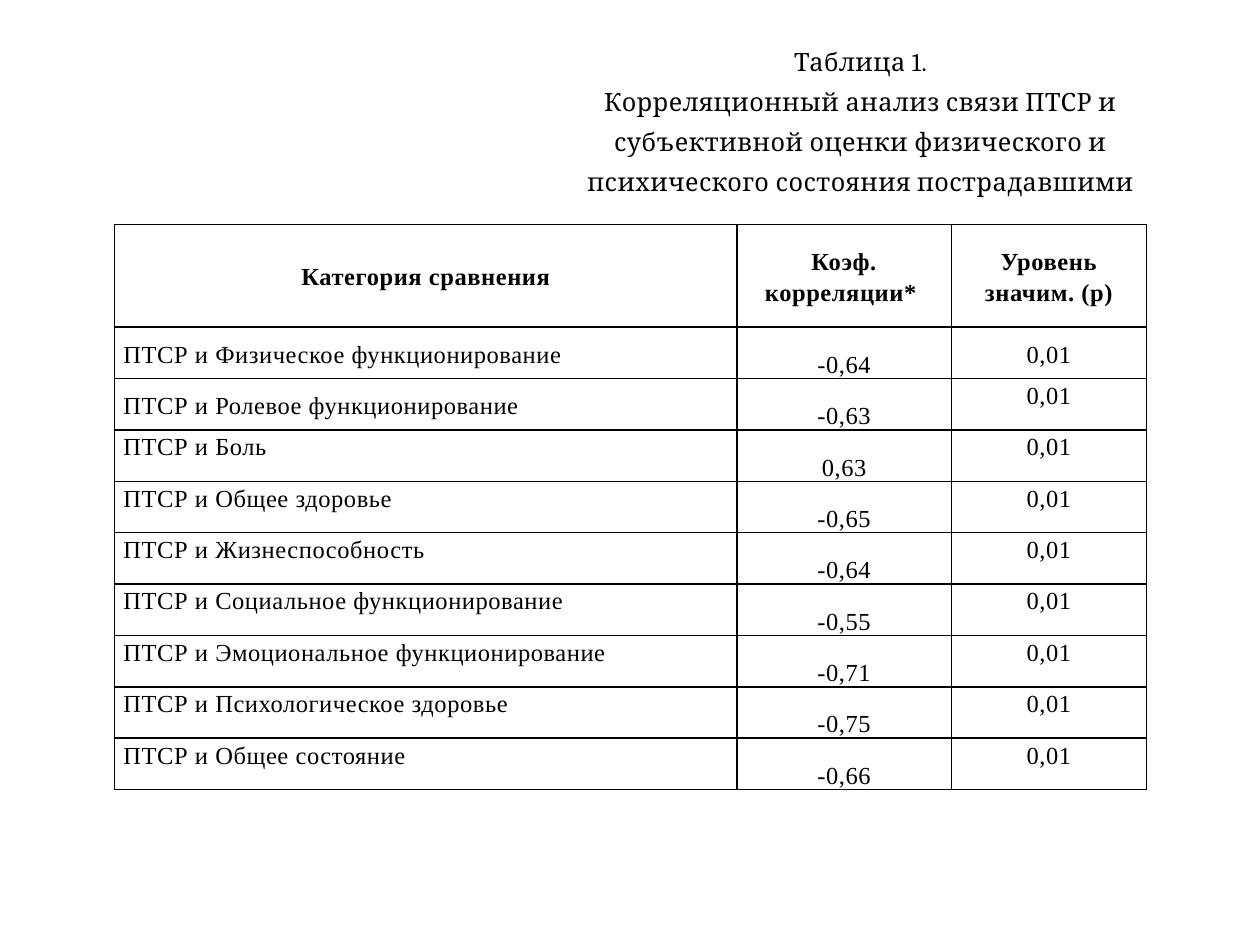
from typing import NamedTuple

from lxml.etree import SubElement
from pptx import Presentation
from pptx.dml.color import RGBColor
from pptx.enum.text import MSO_ANCHOR as Anchor, MSO_AUTO_SIZE as Fit, PP_ALIGN as Align
from pptx.oxml.ns import qn
from pptx.util import Inches, Pt

BLACK = "000000"


class Row(NamedTuple):
    name: str
    coef: str
    name_at: Anchor = Anchor.TOP
    level_at: Anchor = Anchor.TOP


HEADS = ["Категория сравнения", "Коэф. корреляции* ", "Уровень значим. (р)"]
LEVEL = "0,01"
ROWS = [
    Row("Физическое функционирование", "-0,64", Anchor.MIDDLE, Anchor.MIDDLE),
    Row("Ролевое функционирование", "-0,63", Anchor.MIDDLE),
    Row("Боль", "0,63"),
    Row("Общее здоровье", "-0,65"),
    Row("Жизнеспособность", "-0,64"),
    Row("Социальное функционирование", "-0,55"),
    Row("Эмоциональное функционирование", "-0,71"),
    Row("Психологическое здоровье", "-0,75"),
    Row("Общее состояние", "-0,66"),
]
WIDTHS = [4.94, 1.7, 1.55]
HEIGHT = 4.49


def color(code: str) -> RGBColor:
    return RGBColor.from_string(code)


def write(par, text: str, *, font="Times New Roman", size=14.0, bold=False,
          align=Align.CENTER, lines=1.15) -> None:
    par.alignment = align
    par.line_spacing = lines
    run = par.add_run()
    run.text = text
    run.font.name = font
    run.font.size = Pt(size)
    run.font.bold = bold
    run.font.color.rgb = color(BLACK)
    run.font._element.set("spc", "30")


def frame(cell) -> None:
    """Draw a thin line on all four sides of the cell."""
    props = cell._tc.get_or_add_tcPr()
    for side in ("a:lnL", "a:lnR", "a:lnT", "a:lnB"):
        line = SubElement(props, qn(side), w=str(Pt(1)))
        fill = SubElement(line, qn("a:solidFill"))
        SubElement(fill, qn("a:srgbClr"), val=BLACK)


def fill_cell(cell, text: str, anchor: Anchor, **form) -> None:
    frame(cell)
    cell.fill.background()
    cell.margin_left = cell.margin_right = Inches(0.07)
    cell.margin_top = cell.margin_bottom = 0
    cell.vertical_anchor = anchor
    write(cell.text_frame.paragraphs[0], text, **form)


def add_title(slide) -> None:
    title = slide.shapes.title
    title.left, title.top = Inches(0.5), Inches(0.3)
    title.width, title.height = Inches(9), Inches(1.25)
    box = title.text_frame
    box.word_wrap = True
    box.auto_size = Fit.NONE
    box.vertical_anchor = Anchor.MIDDLE
    form = dict(font="Cambria", size=14.4, lines=1.32)
    label = box.paragraphs[0]
    props = label._p.get_or_add_pPr()
    props.set("marL", str(Inches(3.66)))
    props.set("indent", "0")
    write(label, "Таблица 1.", **form)
    write(box.add_paragraph(), "Корреляционный анализ связи ПТСР и субъективной оценки "
          "физического и психического состояния пострадавшими", **form)


def add_grid(slide) -> None:
    table = slide.shapes.add_table(
        len(ROWS) + 1, len(WIDTHS), Inches(0.91), Inches(1.78),
        Inches(sum(WIDTHS)), Inches(HEIGHT)).table
    table.horz_banding = False
    for col, width in zip(table.columns, WIDTHS):
        col.width = Inches(width)
    # The head row is twice as high as the others
    unit = HEIGHT / (len(ROWS) + 2)
    for i, row in enumerate(table.rows):
        row.height = Inches(unit * (1 if i else 2))
    for i, head in enumerate(HEADS):
        fill_cell(table.cell(0, i), head, Anchor.MIDDLE, bold=True)
    for i, row in enumerate(ROWS, 1):
        fill_cell(table.cell(i, 0), f"ПТСР и {row.name}", row.name_at, align=Align.JUSTIFY)
        fill_cell(table.cell(i, 1), row.coef, Anchor.BOTTOM)
        fill_cell(table.cell(i, 2), LEVEL, row.level_at)


def main() -> None:
    deck = Presentation()
    deck.slide_width, deck.slide_height = Inches(10), Inches(7.5)
    slide = deck.slides.add_slide(deck.slide_layouts[5])
    add_title(slide)
    add_grid(slide)
    deck.save("out.pptx")


if __name__ == "__main__":
    main()
